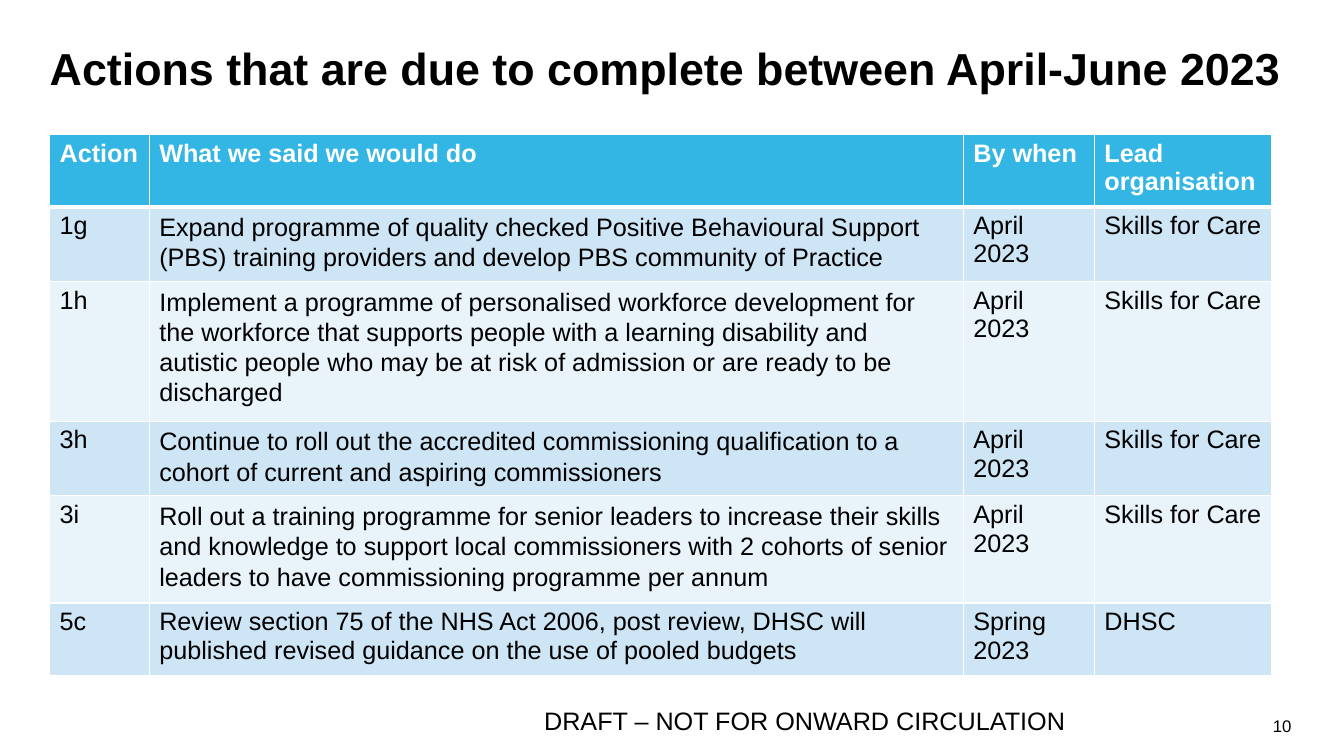
from lxml import etree
from pptx import Presentation
from pptx.dml.color import RGBColor
from pptx.enum.text import MSO_ANCHOR, PP_ALIGN
from pptx.oxml.ns import qn
from pptx.util import Pt

TOP, BOTTOM = MSO_ANCHOR.TOP, MSO_ANCHOR.BOTTOM
LEFT, RIGHT = PP_ALIGN.LEFT, PP_ALIGN.RIGHT

FONT = "Arial"
COLOURS = {
    "text": "000000",
    "header": "34B6E4",
    "odd_row": "CEE5F5",
    "even_row": "E8F3FA",
    "white": "FFFFFF",
}
COLUMN_WIDTHS = [71.2, 581.5, 93.6, 126.7]
ROW_HEIGHT = 51.84
HEADINGS = ["Action", "What we said we would do", "By when", "Lead organisation"]
ACTIONS = [
    ["1g", "Expand programme of quality checked Positive Behavioural Support (PBS) "
     "training providers and develop PBS community of Practice",
     "April 2023", "Skills for Care"],
    ["1h", "Implement a programme of personalised workforce development for the "
     "workforce that supports people with a learning disability and autistic people "
     "who may be at risk of admission or are ready to be discharged",
     "April 2023", "Skills for Care"],
    ["3h", "Continue to roll out the accredited commissioning qualification to a "
     "cohort of current and aspiring commissioners",
     "April 2023", "Skills for Care"],
    ["3i", "Roll out a training programme for senior leaders to increase their skills "
     "and knowledge to support local commissioners with 2 cohorts of senior leaders "
     "to have commissioning programme per annum",
     "April 2023", "Skills for Care"],
    ["5c", "Review section 75 of the NHS Act 2006, post review, DHSC will published "
     "revised guidance on the use of pooled budgets",
     "Spring 2023", "DHSC"],
]


def colour(name):
    return RGBColor.from_string(COLOURS[name])


def write(paragraph, text, size, colour_name="text", bold=False):
    run = paragraph.add_run()
    run.text = text
    run.font.name = FONT
    run.font.size = Pt(size)
    run.font.bold = bold
    run.font.color.rgb = colour(colour_name)


def add_text(slide, box, text, size, bold=False, anchor=TOP, align=LEFT, spacing=None):
    frame = slide.shapes.add_textbox(*map(Pt, box)).text_frame
    frame.word_wrap = True
    frame.vertical_anchor = anchor
    paragraph = frame.paragraphs[0]
    paragraph.alignment = align
    paragraph.line_spacing = spacing
    write(paragraph, text, size, bold=bold)


def add_cell_borders(cell, widths):
    properties = cell._tc.get_or_add_tcPr()
    for side, width in widths.items():
        line = etree.SubElement(properties, qn("a:" + side), w=str(Pt(width)))
        fill = etree.SubElement(line, qn("a:solidFill"))
        etree.SubElement(fill, qn("a:srgbClr"), val=COLOURS["white"])


def fill_cell(cell, text, fill_name, colour_name="text", bold=False):
    cell.fill.solid()
    cell.fill.fore_color.rgb = colour(fill_name)
    write(cell.text_frame.paragraphs[0], text, 18, colour_name, bold)


def add_actions_table(slide, left, top):
    row_count = len(ACTIONS) + 1
    table = slide.shapes.add_table(
        row_count, len(HEADINGS), Pt(left), Pt(top),
        Pt(sum(COLUMN_WIDTHS)), Pt(row_count * ROW_HEIGHT)).table
    for column, width in zip(table.columns, COLUMN_WIDTHS):
        column.width = Pt(width)

    for index, heading in enumerate(HEADINGS):
        cell = table.cell(0, index)
        add_cell_borders(cell, {"lnL": 1, "lnR": 1, "lnT": 1, "lnB": 3})
        fill_cell(cell, heading, "header", "white", True)

    for row, action in enumerate(ACTIONS, 1):
        band = "odd_row" if row % 2 else "even_row"
        for index, text in enumerate(action):
            fill_cell(table.cell(row, index), text, band)
        if row < len(ACTIONS):
            description = table.cell(row, 1).text_frame.paragraphs[0]
            description.line_spacing = 1.07
            description.space_after = Pt(8)


def add_footer(slide, top, height):
    add_text(slide, (869.8, top, 59.8, height), "10", 12, anchor=BOTTOM, align=RIGHT)
    add_text(slide, (381.6, top, 420.5, height), "DRAFT – NOT FOR ONWARD CIRCULATION", 18)


def main():
    presentation = Presentation()
    presentation.slide_width = Pt(960)
    presentation.slide_height = Pt(540)
    slide = presentation.slides.add_slide(presentation.slide_layouts[6])
    add_text(slide, (28.4, 29.5, 901.4, 66.2),
             "Actions that are due to complete between April-June 2023",
             32, bold=True, spacing=0.9)
    add_actions_table(slide, 35.4, 95.9)
    add_footer(slide, 500.4, 28.8)
    presentation.save("out.pptx")


if __name__ == "__main__":
    main()
